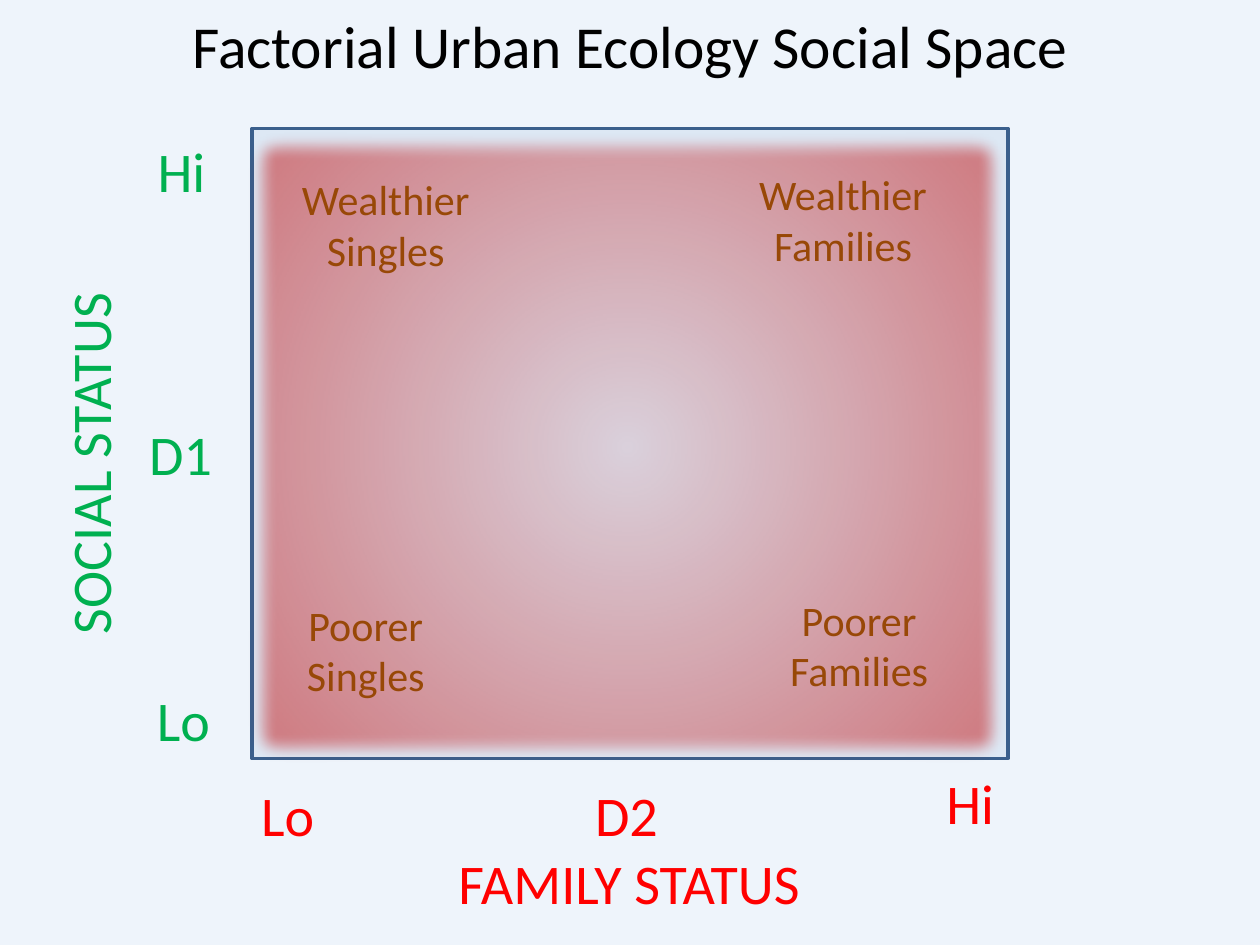
from lxml import etree
from pptx import Presentation
from pptx.dml.color import RGBColor
from pptx.enum.shapes import MSO_SHAPE
from pptx.enum.text import MSO_ANCHOR, MSO_AUTO_SIZE, PP_ALIGN
from pptx.oxml import parse_xml
from pptx.oxml.ns import nsdecls, qn
from pptx.util import Cm, Pt

RECTANGLE = MSO_SHAPE.RECTANGLE
MIDDLE = MSO_ANCHOR.MIDDLE
FIT_SHAPE = MSO_AUTO_SIZE.SHAPE_TO_FIT_TEXT
CENTER = PP_ALIGN.CENTER

FONT = "Calibri"
BACKGROUND = RGBColor(0xEE, 0xF4, 0xFB)
FRAME_FILL = RGBColor(0x4F, 0x81, 0xBD)
FRAME_LINE = RGBColor(0x3A, 0x5F, 0x8C)
GLOW = RGBColor(0xC0, 0x00, 0x00)
GREEN = RGBColor(0x00, 0xB0, 0x50)
RED = RGBColor(0xFF, 0x00, 0x00)
BROWN = RGBColor(0x98, 0x48, 0x07)
BLACK = RGBColor(0x00, 0x00, 0x00)

LABEL_HEIGHT = 1.63
# text, left, top, width in cm
SOCIAL_LABELS = [("Hi", 2.9, 2.62, 1.52), ("D1", 2.74, 8.33, 1.8), ("Lo", 2.9, 13.69, 1.6)]
FAMILY_LABELS = [("Lo", 5, 15.6, 1.6), ("D2", 11.73, 15.6, 1.8), ("Hi", 18.8, 15.37, 1.52),
                 ("FAMILY STATUS", 8.86, 16.99, 7.65)]
CORNER_LABELS = [("Wealthier\nSingles", 5.77, 3.38, 4.01),
                 ("Wealthier\nFamilies", 14.99, 3.28, 4.01),
                 ("Poorer\nSingles", 5.89, 11.96, 2.97),
                 ("Poorer\nFamilies", 15.62, 11.86, 3.4)]


def add_text(slide, text, left, top, width, height, *, size=32, color=BLACK,
             wrap=False, upward=False):
    """Add centred text, one paragraph for each line of text."""
    box = slide.shapes.add_textbox(Cm(left), Cm(top), Cm(width), Cm(height))
    frame = box.text_frame
    frame.word_wrap = wrap
    if wrap:
        frame.vertical_anchor = MIDDLE
    else:
        frame.auto_size = FIT_SHAPE
    if upward:
        box.element.txBody.find(qn("a:bodyPr")).set("vert", "vert270")
    frame.text = text
    for para in frame.paragraphs:
        para.alignment = CENTER
        for span in para.runs:
            span.font.name = FONT
            span.font.size = Pt(size)
            span.font.color.rgb = color


def add_rectangle(slide, left, top, width, height):
    shape = slide.shapes.add_shape(RECTANGLE, Cm(left), Cm(top), Cm(width), Cm(height))
    shape.shadow.inherit = False
    return shape


def add_frame(slide):
    frame = add_rectangle(slide, 5.08, 2.59, 15.24, 12.7)
    frame.fill.solid()
    frame.fill.fore_color.rgb = FRAME_FILL
    color = frame.element.spPr.find(".//" + qn("a:srgbClr"))
    etree.SubElement(color, qn("a:alpha"), val="10000")
    frame.line.color.rgb = FRAME_LINE
    frame.line.width = Pt(2)


def add_glow(slide):
    """Add the soft-edged red area that fades towards its centre."""
    glow = add_rectangle(slide, 4.85, 2.51, 15.6, 13.03)
    glow.line.fill.background()
    stops = "".join(
        f'<a:gs pos="{position}"><a:srgbClr val="{GLOW}"><a:alpha val="{alpha}"/></a:srgbClr></a:gs>'
        for position, alpha in ((0, 10000), (100000, 50000)))
    gradient = parse_xml(
        f'<a:gradFill {nsdecls("a")} rotWithShape="1"><a:gsLst>{stops}</a:gsLst>'
        '<a:path path="circle"><a:fillToRect l="50000" t="50000" r="50000" b="50000"/></a:path>'
        '</a:gradFill>')
    properties = glow.element.spPr
    properties.find(qn("a:prstGeom")).addnext(gradient)
    effects = properties.find(qn("a:effectLst"))
    etree.SubElement(effects, qn("a:softEdge"), rad=str(Pt(10)))


def add_labels(slide, labels, height, **text_format):
    for text, left, top, width in labels:
        add_text(slide, text, left, top, width, height, **text_format)


def main():
    deck = Presentation()
    deck.slide_width, deck.slide_height = Cm(25.4), Cm(19.05)
    slide = deck.slides.add_slide(deck.slide_layouts[6])
    slide.background.fill.solid()
    slide.background.fill.fore_color.rgb = BACKGROUND

    add_frame(slide)
    add_labels(slide, SOCIAL_LABELS, LABEL_HEIGHT, color=GREEN)
    add_labels(slide, FAMILY_LABELS, LABEL_HEIGHT, color=RED)
    add_text(slide, "SOCIAL STATUS", 0.99, 5.74, 1.88, 7.21, color=GREEN, upward=True)
    add_text(slide, "Factorial Urban Ecology Social Space", 1.9, 0.05, 21.6, 1.7,
             size=34, wrap=True)
    add_glow(slide)
    add_labels(slide, CORNER_LABELS, 2.31, size=24, color=BROWN)
    deck.save("out.pptx")


if __name__ == "__main__":
    main()
